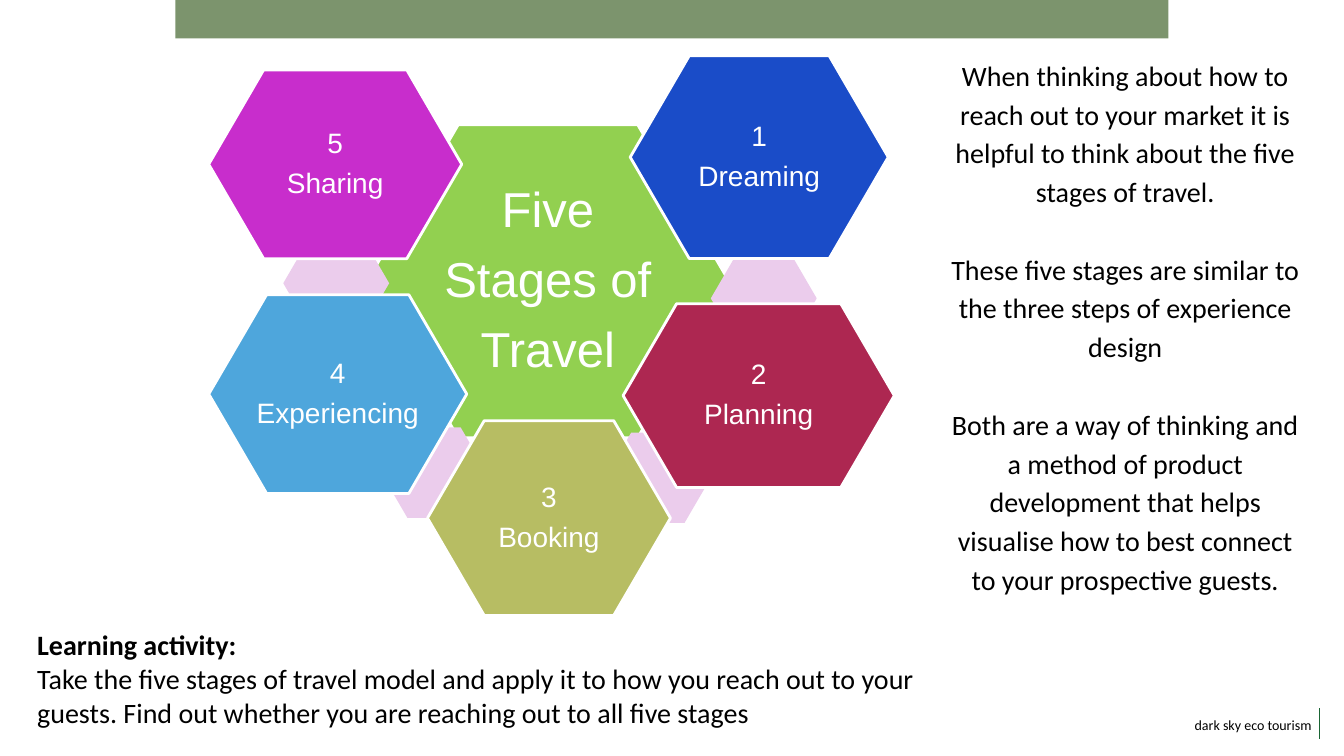
"""Build the slide on the five stages of travel."""
from pptx import Presentation
from pptx.dml.color import RGBColor as Rgb
from pptx.enum.shapes import MSO_CONNECTOR as Conn, MSO_SHAPE as Kind
from pptx.enum.text import MSO_ANCHOR as Anchor, MSO_AUTO_SIZE as Auto, PP_ALIGN as Align
from pptx.oxml import parse_xml
from pptx.oxml.ns import nsdecls
from pptx.util import Inches, Pt

theme = dict(
    ink="000000", white="FFFFFF", bar="7C946D", rule="1A6534",
    hub="92D050", link="EBCCEC", share="C82DCC", dream="1A4CC8",
    plan="AD2751", book="B7BD63", live="4EA6DC",
    head=35, body=20, foot=10, sans="Calibri", label="Arial",
)

deck = Presentation()
deck.slide_width, deck.slide_height = Inches(13.33), Inches(7.5)
slide = deck.slides.add_slide(deck.slide_layouts[1])
shapes = slide.shapes


def area(*box):
    """Turn percent shares of the slide into left, top, width and height."""
    sides = (deck.slide_width, deck.slide_height) * 2
    return [round(side * part / 100) for side, part in zip(sides, box)]


def write(frame, text, size="body", color="ink", font="sans", align=Align.LEFT,
          space=1.0, gap=0, inset=(0.1, 0.05), anchor=Anchor.TOP, wrap=True):
    """Fill a text frame, one paragraph a line."""
    frame.auto_size, frame.word_wrap = Auto.NONE, wrap
    frame.vertical_anchor = anchor
    frame.margin_left = frame.margin_right = Inches(inset[0])
    frame.margin_top = frame.margin_bottom = Inches(inset[1])
    for i, line in enumerate(text.split("\n")):
        para = frame.paragraphs[0] if i == 0 else frame.add_paragraph()
        para.alignment, para.line_spacing = align, space
        para.space_before, para.space_after = Pt(gap if i else 0), Pt(0)
        run = para.add_run()
        run.text = line
        run.font.name, run.font.size = theme[font], Pt(theme[size])
        run.font.color.rgb = Rgb.from_string(theme[color])


foot = shapes.add_textbox(*area(88.15, 94.13, 11.48, 3.6))
write(foot.text_frame, "dark sky eco tourism", size="foot")

x, low, _, _ = area(98.2, 97.73, 0, 0)
high = area(0, 93.6, 0, 0)[1]
rule = shapes.add_connector(Conn.STRAIGHT, x, low, x, high)
rule.line.color.rgb, rule.line.width = Rgb.from_string(theme["rule"]), Pt(0.75)
rule.element.spPr.append(parse_xml(f"<a:effectLst {nsdecls('a')}/>"))

bar = shapes.add_shape(Kind.RECTANGLE, *area(13.05, 0, 73.89, 5.07))
bar.shadow.inherit = False
bar.fill.solid()
bar.fill.fore_color.rgb = Rgb.from_string(theme["bar"])
bar.line.fill.background()

body = slide.placeholders[1]
body.left, body.top, body.width, body.height = area(68.72, 6.4, 29.26, 78.27)
write(body.text_frame,
      "When thinking about how to reach out to your market it is helpful "
      "to think about the five stages of travel.\n"
      "These five stages are similar to the three steps of experience design\n"
      "Both are a way of thinking and a method of product development that "
      "helps visualise how to best connect to your prospective guests.",
      align=Align.CENTER, space=1.15, gap=28)
for para in body.text_frame.paragraphs:
    props = para._p.get_or_add_pPr()
    props.set("marL", str(Inches(0.1)))
    props.set("indent", "0")
    props.append(parse_xml(f"<a:buNone {nsdecls('a')}/>"))

span = (7.88, 12)
cells = [
    ("hub", "", (27.31, 16.4, 26.93, 41.6)),
    ("link", "", (21.08, 31.47, *span)),
    ("share", "5\nSharing", (15.53, 9.2, 18.83, 25.07)),
    ("link", "", (52.89, 33.47, *span)),
    ("dream", "1\nDreaming", (46.89, 7.33, 19.2, 26.93)),
    ("link", "", (45.01, 57.2, *span)),
    ("plan", "2\nPlanning", (46.36, 40.13, 20.18, 24.4)),
    ("link", "", (28.36, 56.53, *span)),
    ("book", "3\nBooking", (31.81, 55.6, 18.08, 25.87)),
    ("live", "4\nExperiencing", (15.53, 38.93, 19.2, 26.4)),
]
label = dict(color="white", font="label", align=Align.CENTER, space=0.9,
             anchor=Anchor.MIDDLE)
title = shapes.title
for name, text, box in cells:
    cell = shapes.add_shape(Kind.HEXAGON, *area(*box))
    cell.shadow.inherit = False
    cell.adjustments[0] = 0.29
    cell.adjustments[1] = 1.15
    cell.fill.solid()
    cell.fill.fore_color.rgb = Rgb.from_string(theme[name])
    if name == "link":
        cell.line.fill.background()
    else:
        cell.line.color.rgb = Rgb.from_string(theme["white"])
        cell.line.width = Pt(2)
    if text:
        write(cell.text_frame, text, gap=7, inset=(0.03, 0.03), wrap=False, **label)
    if name == "hub":
        cell.element.addnext(title.element)

title.left, title.top, title.width, title.height = area(31.81, 23.33, 17.93, 27.73)
write(title.text_frame, "Five\nStages of\nTravel", size="head", gap=12.2,
      inset=(0.05, 0.05), **label)

task = shapes.add_textbox(*area(2.03, 82.4, 67.37, 14.8))
write(task.text_frame,
      "Learning activity:\n"
      "Take the five stages of travel model and apply it to how you reach out "
      "to your guests. Find out whether you are reaching out to all five stages")
task.text_frame.paragraphs[0].runs[0].font.bold = True

deck.save("out.pptx")
